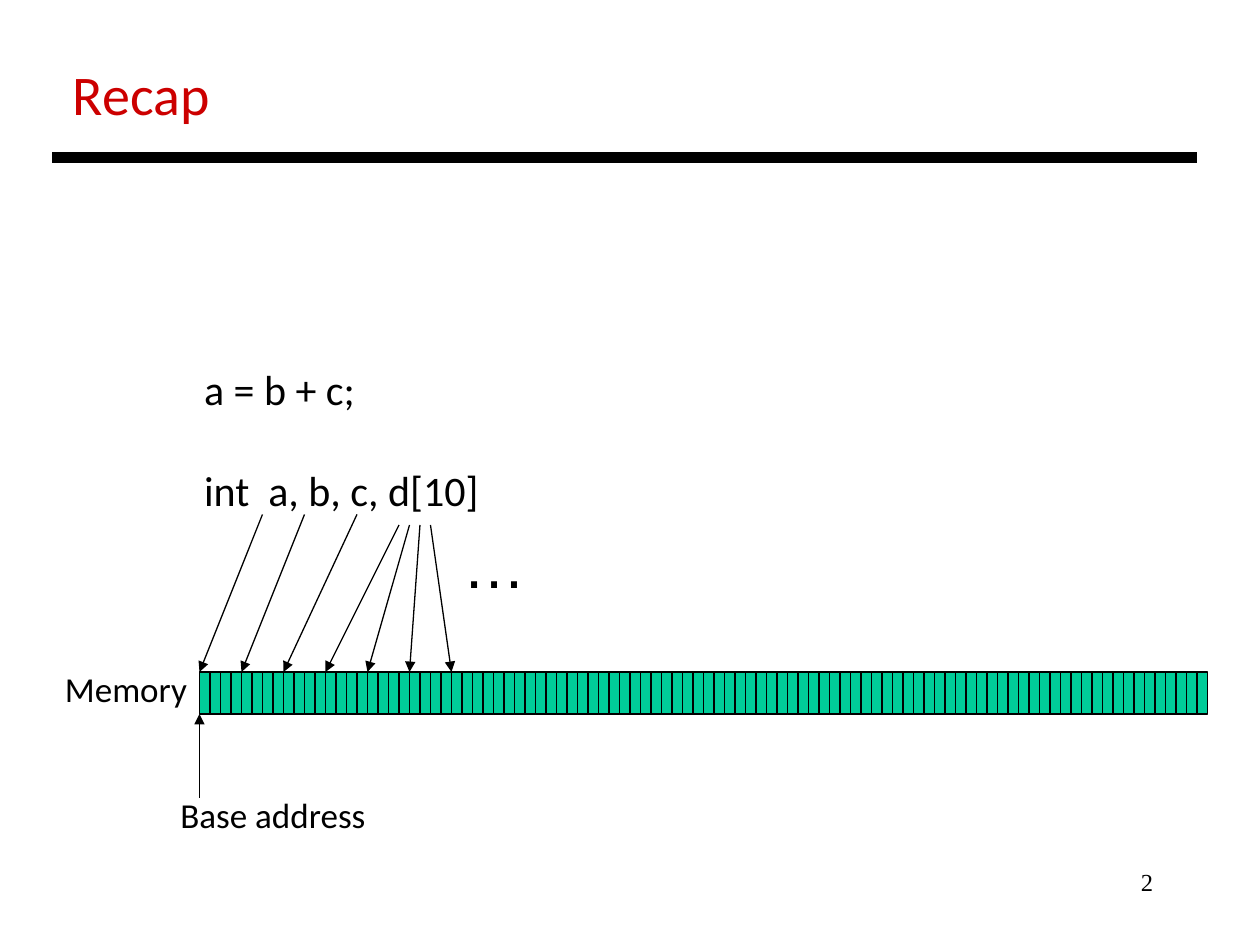
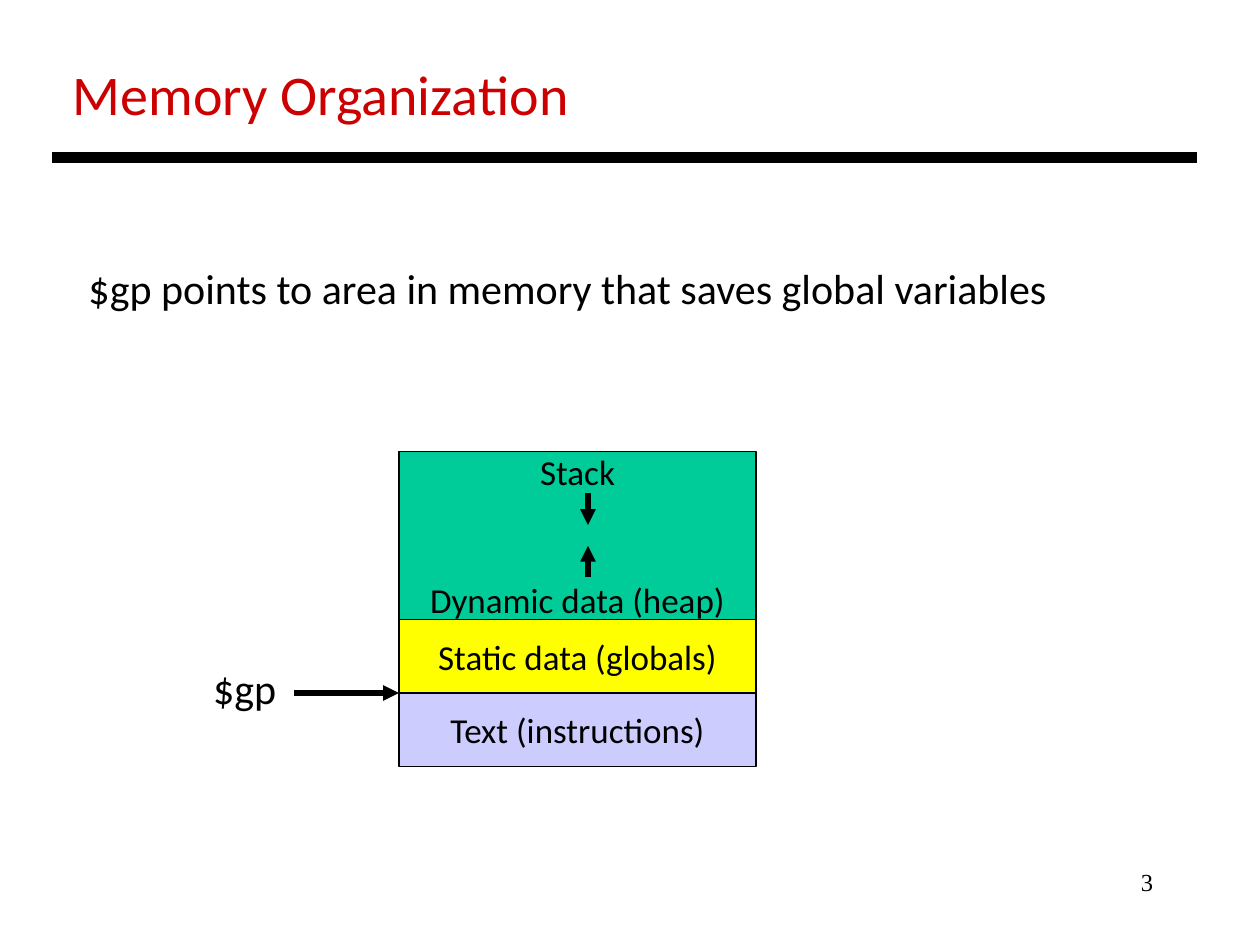
from dataclasses import dataclass

from pptx import Presentation
from pptx.dml.color import RGBColor
from pptx.enum.shapes import MSO_CONNECTOR, MSO_SHAPE
from pptx.enum.text import MSO_ANCHOR as Anchor, PP_ALIGN as Align
from pptx.oxml.ns import qn
from pptx.util import Emu, Pt
from lxml.etree import SubElement

EMU_PER_PX = 9525  # 96 px to the inch


@dataclass(frozen=True)
class Theme:
    black: str = "000000"
    red: str = "CC0000"
    green: str = "00CC99"
    yellow: str = "FFFF00"
    lavender: str = "CCCCFF"
    body_font: str = "Calibri"
    number_font: str = "Times New Roman"
    symbol_font: str = "Arial"
    title_size: int = 32
    body_size: int = 24
    label_size: int = 20
    number_size: int = 14
    ellipsis_size: int = 36
    thin: float = 0.75
    thick: int = 3
    rule: int = 6


THEME = Theme()

# Slide 2: recap of variables in memory
CODE_LINES = ["a = b + c;", "int  a, b, c, d[10]"]
CODE_GAP = 29
SCALAR_STARTS = [(200, 392), (232, 392), (272, 392)]
ARRAY_STARTS = [(304, 400), (312, 400), (320, 400), (328, 400)]
MEMORY_LEFT, MEMORY_TOP = 152, 512
CELL_WIDTH, CELL_HEIGHT = 8, 32
CELL_COUNT = 96
CELLS_PER_WORD = 4

# Slide 3: memory regions from top to bottom: lines of text, height, fill
REGIONS = [
    (["Stack", "Dynamic data (heap)"], 128, THEME.green),
    (["Static data (globals)"], 56, THEME.yellow),
    (["Text (instructions)"], 56, THEME.lavender),
]
REGION_LEFT, REGION_TOP, REGION_WIDTH = 304, 344, 272
HEAP_GAP = 49
GROWTH_X = 448
GROWTH_ARROWS = [(376, 400), (440, 416)]


def px(length):
    return Emu(length * EMU_PER_PX)


def write_lines(text_frame, lines, size, font=THEME.body_font,
                color=THEME.black, align=Align.LEFT, gap=0):
    """Write one paragraph per line, with gap points between paragraphs."""
    text_frame.text = "\n".join(lines)
    for index, paragraph in enumerate(text_frame.paragraphs):
        paragraph.alignment = align
        paragraph.space_before = Pt(gap if index else 0)
        for run in paragraph.runs:
            run.font.size = Pt(size)
            run.font.name = font
            run.font.color.rgb = RGBColor.from_string(color)


def add_text(slide, box, lines, size, **style):
    text_box = slide.shapes.add_textbox(*map(px, box))
    text_box.text_frame.word_wrap = True
    write_lines(text_box.text_frame, lines, size, **style)


def add_block(slide, box, fill):
    block = slide.shapes.add_shape(MSO_SHAPE.RECTANGLE, *map(px, box))
    block.shadow.inherit = False
    block.fill.solid()
    block.fill.fore_color.rgb = RGBColor.from_string(fill)
    block.line.color.rgb = RGBColor.from_string(THEME.black)
    block.line.width = Pt(THEME.thin)
    return block


def add_line(slide, start, end, width, arrow=True):
    connector = slide.shapes.add_connector(
        MSO_CONNECTOR.STRAIGHT, *map(px, (*start, *end)))
    connector.line.color.rgb = RGBColor.from_string(THEME.black)
    connector.line.width = Pt(width)
    properties = connector._element.spPr
    if arrow:
        SubElement(properties.find(qn("a:ln")), qn("a:tailEnd"), type="triangle")
    SubElement(properties, qn("a:effectLst"))


def add_base_slide(presentation, title, number):
    """Add a blank slide with its page number, title and rule."""
    slide = presentation.slides.add_slide(presentation.slide_layouts[6])
    add_text(slide, (688, 656, 200, 48), [str(number)], THEME.number_size,
             font=THEME.number_font, align=Align.RIGHT)
    add_text(slide, (46, 41, 840, 62), [title], THEME.title_size, color=THEME.red)
    add_line(slide, (40, 120), (912, 120), THEME.rule, arrow=False)
    return slide


def add_recap(presentation):
    slide = add_base_slide(presentation, "Recap", 2)
    add_text(slide, (146, 272, 260, 126), CODE_LINES, THEME.body_size, gap=CODE_GAP)

    for index in range(CELL_COUNT):
        left = MEMORY_LEFT + index * CELL_WIDTH
        add_block(slide, (left, MEMORY_TOP, CELL_WIDTH, CELL_HEIGHT), THEME.green)
    add_text(slide, (40, 504, 115, 41), ["Memory"], THEME.label_size)

    for index, start in enumerate(SCALAR_STARTS + ARRAY_STARTS):
        word_left = MEMORY_LEFT + index * CELLS_PER_WORD * CELL_WIDTH
        add_line(slide, start, (word_left, MEMORY_TOP), THEME.thin)
    add_text(slide, (343, 396, 67, 67), ["…"], THEME.ellipsis_size,
             font=THEME.symbol_font)

    memory_bottom = MEMORY_TOP + CELL_HEIGHT
    add_line(slide, (MEMORY_LEFT, 608), (MEMORY_LEFT, memory_bottom), THEME.thin)
    add_text(slide, (128, 600, 170, 42), ["Base address"], THEME.label_size)


def add_memory_organization(presentation):
    slide = add_base_slide(presentation, "Memory Organization", 3)
    add_text(slide, (58, 195, 780, 87),
             ["$gp points to area in memory that saves global variables"],
             THEME.body_size)

    top = REGION_TOP
    for lines, height, fill in REGIONS:
        region = add_block(slide, (REGION_LEFT, top, REGION_WIDTH, height), fill)
        text_frame = region.text_frame
        text_frame.word_wrap = False
        text_frame.vertical_anchor = Anchor.MIDDLE
        write_lines(text_frame, lines, THEME.label_size,
                    align=Align.CENTER, gap=HEAP_GAP)
        top += height

    for start_y, end_y in GROWTH_ARROWS:
        add_line(slide, (GROWTH_X, start_y), (GROWTH_X, end_y), THEME.thick)
    globals_bottom = REGION_TOP + sum(height for _, height, _ in REGIONS[:2])
    add_line(slide, (224, globals_bottom), (REGION_LEFT, globals_bottom), THEME.thick)
    add_text(slide, (153, 500, 75, 48), ["$gp"], THEME.body_size)


def main():
    presentation = Presentation()
    presentation.slide_width, presentation.slide_height = px(960), px(720)
    add_recap(presentation)
    add_memory_organization(presentation)
    presentation.save("out.pptx")


if __name__ == "__main__":
    main()
